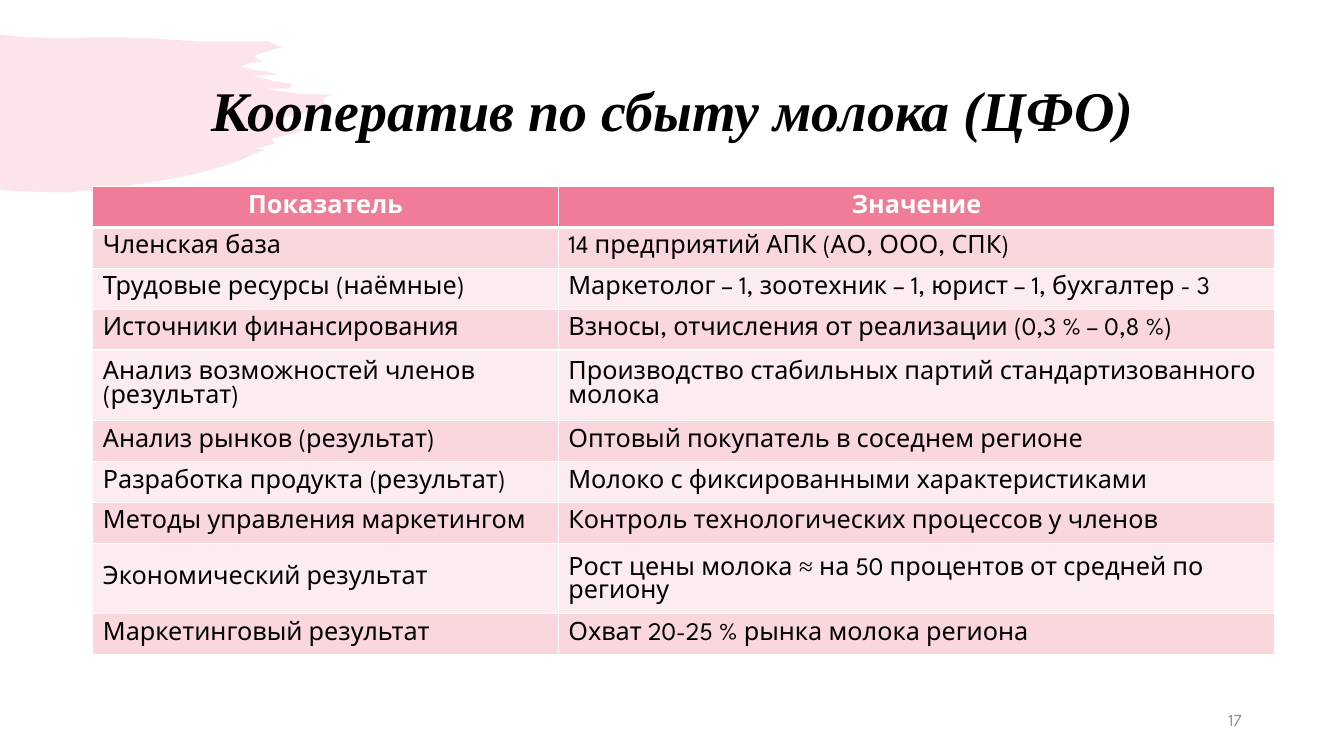
import pptx
import pptx.dml.color
import pptx.enum.text
import pptx.oxml
import pptx.oxml.ns
import pptx.util
from pptx.util import Cm

PINK = "F07C98"
BANDS = ("F9D7DD", "FCECEF")
WHITE = "FFFFFF"
BLACK = "000000"
BODY_FONT = "League Spartan"
TITLE_FONT = "Times New Roman"
ALIGN = pptx.enum.text.PP_ALIGN
MIDDLE = pptx.enum.text.MSO_ANCHOR.MIDDLE

INDICATORS = [
    ("Показатель", "Значение"),
    ("Членская база", "14 предприятий АПК (АО, ООО, СПК)"),
    ("Трудовые ресурсы (наёмные)", "Маркетолог – 1, зоотехник – 1, юрист – 1, бухгалтер - 3"),
    ("Источники финансирования", "Взносы, отчисления от реализации (0,3 % – 0,8 %)"),
    ("Анализ возможностей членов (результат)",
     "Производство стабильных партий стандартизованного молока"),
    ("Анализ рынков (результат)", "Оптовый покупатель в соседнем регионе"),
    ("Разработка продукта (результат)", "Молоко с фиксированными характеристиками"),
    ("Методы управления маркетингом", "Контроль технологических процессов у членов"),
    ("Экономический результат", "Рост цены молока ≈ на 50 процентов от средней по региону"),
    ("Маркетинговый результат", "Охват 20-25 % рынка молока региона"),
]

# Outline of the brush stroke, in hundredths of an inch from the slide corner
BRUSH_STROKE = [
    (0, 34), (6, 35), (25, 37), (66, 38), (102, 37), (151, 38), (194, 41), (248, 41),
    (266, 41), (280, 47), (271, 49), (255, 54), (253, 57), (256, 59), (262, 62), (250, 62),
    (238, 66), (246, 68), (256, 70), (266, 71), (275, 74), (251, 75), (263, 78), (273, 81),
    (280, 82), (288, 83), (290, 85), (287, 88), (284, 88), (263, 88), (296, 93), (330, 94),
    (321, 97), (322, 104), (318, 106), (307, 111), (300, 113), (283, 116), (280, 120),
    (278, 125), (274, 128), (308, 128), (289, 133), (269, 138), (273, 142), (252, 148),
    (263, 148), (231, 162), (197, 172), (150, 181), (102, 188), (65, 191), (23, 190),
    (7, 189), (0, 188),
]


def rgb(color):
    return pptx.dml.color.RGBColor.from_string(color)


def format_run(run, font, size, color, bold=False, italic=False):
    run.font.name = font
    run.font.size = pptx.util.Pt(size)
    run.font.color.rgb = rgb(color)
    run.font.bold = bold
    run.font.italic = italic


def add_brush_stroke(slide):
    outline = slide.shapes.build_freeform(*BRUSH_STROKE[0], scale=Cm(2.54) / 100)
    outline.add_line_segments(BRUSH_STROKE[1:], close=True)
    stroke = outline.convert_to_shape()
    stroke.shadow.inherit = False
    stroke.line.fill.background()
    stroke.fill.solid()
    stroke.fill.fore_color.rgb = rgb(PINK)
    pink = stroke.fill._xPr.find(".//" + pptx.oxml.ns.qn("a:srgbClr"))
    pink.append(pptx.oxml.parse_xml(f'<a:alpha {pptx.oxml.ns.nsdecls("a")} val="20000"/>'))


def add_text(slide, text, box, align, **look):
    """Place one line of text in box: left, top, width, height in centimetres."""
    frame = slide.shapes.add_textbox(*map(Cm, box)).text_frame
    frame.word_wrap = True
    frame.vertical_anchor = MIDDLE
    frame.text = text
    line = frame.paragraphs[0]
    line.alignment = align
    line.line_spacing = 0.9
    format_run(line.runs[0], **look)


def add_borders(cell, widths):
    """Draw white borders; widths are points for left, right, top and bottom."""
    for side, width in zip("LRTB", widths):
        cell._tc.get_or_add_tcPr().append(pptx.oxml.parse_xml(
            f'<a:ln{side} {pptx.oxml.ns.nsdecls("a")} w="{pptx.util.Pt(width)}">'
            f'<a:solidFill><a:srgbClr val="{WHITE}"/></a:solidFill></a:ln{side}>'))


def fill_cell(cell, text, is_header, background, top, bottom):
    add_borders(cell, (1, 1, top, bottom))
    cell.fill.solid()
    cell.fill.fore_color.rgb = rgb(background)
    cell.vertical_anchor = MIDDLE
    paragraph = cell.text_frame.paragraphs[0]
    paragraph.alignment = ALIGN.CENTER if is_header else ALIGN.LEFT
    before, sign, after = text.partition("≈ ")
    for part in filter(None, (before, sign, after)):
        run = paragraph.add_run()
        run.text = part
        format_run(run, TITLE_FONT if part == sign else BODY_FONT, 18,
                   WHITE if is_header else BLACK, bold=is_header)


def add_indicator_table(slide):
    widths = (Cm(11.73), Cm(18.06))
    row_height = Cm(1.03)
    table = slide.shapes.add_table(len(INDICATORS), len(widths), Cm(2.34), Cm(4.7),
                                   sum(widths), row_height * len(INDICATORS)).table
    for column, width in zip(table.columns, widths):
        column.width = width
    for r, texts in enumerate(INDICATORS):
        table.rows[r].height = row_height
        background = BANDS[(r - 1) % 2] if r else PINK
        for c, text in enumerate(texts):
            fill_cell(table.cell(r, c), text, r == 0, background,
                      top=3 if r == 1 else 1, bottom=3 if r == 0 else 1)


def main():
    deck = pptx.Presentation()
    deck.slide_width, deck.slide_height = Cm(33.87), Cm(19.05)
    slide = deck.slides.add_slide(deck.slide_layouts[6])
    add_brush_stroke(slide)
    add_text(slide, "Кооператив по сбыту молока (ЦФО)", (2.34, 1.02, 29.21, 3.68),
             ALIGN.CENTER, font=TITLE_FONT, size=40, color=BLACK, bold=True, italic=True)
    add_indicator_table(slide)
    add_text(slide, "17", (23.93, 17.65, 7.62, 1.02), ALIGN.RIGHT,
             font=BODY_FONT, size=12, color="8C8C8C")
    deck.save("out.pptx")


if __name__ == "__main__":
    main()
